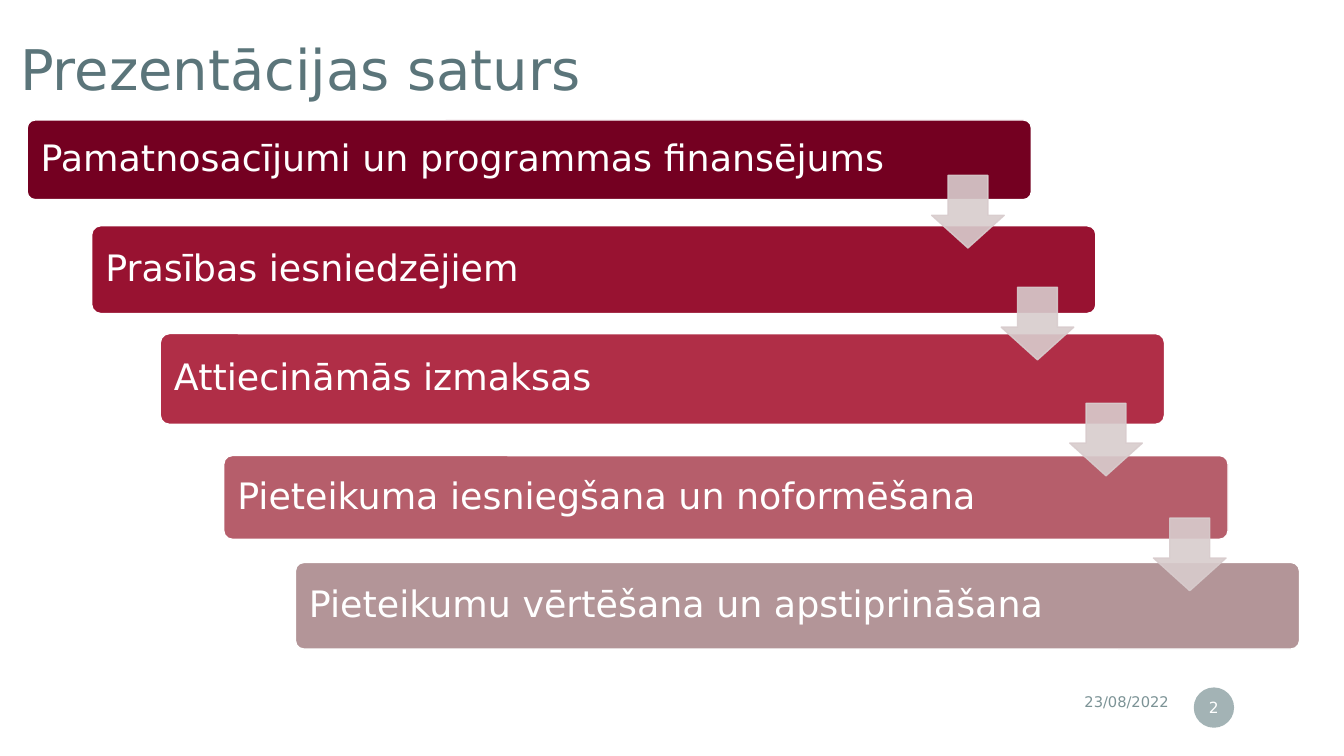
"""Build the contents slide: five cascading topics joined by arrows."""
from dataclasses import dataclass

from lxml.etree import SubElement
from pptx import Presentation
from pptx.dml.color import RGBColor
from pptx.enum.shapes import MSO_SHAPE
from pptx.enum.text import MSO_ANCHOR, PP_ALIGN
from pptx.oxml.ns import qn
from pptx.util import Pt

PX = 9144


@dataclass(frozen=True)
class Theme:
    font: str = "DejaVu Sans"
    title: str = "5B757A"
    footer: str = "7C9396"
    white: str = "FFFFFF"
    arrow: str = "D8CCCD"
    title_size: float = 40
    topic_size: float = 26
    date_size: float = 10.5
    number_size: float = 11


theme = Theme()


def write(shape, text, size, color, align=PP_ALIGN.LEFT, insets=(10, 5), spacing=1.0):
    frame = shape.text_frame
    frame.word_wrap = True
    frame.vertical_anchor = MSO_ANCHOR.MIDDLE
    frame.margin_left = frame.margin_right = insets[0] * PX
    frame.margin_top = frame.margin_bottom = insets[1] * PX
    paragraph = frame.paragraphs[0]
    paragraph.text = text
    paragraph.alignment = align
    paragraph.line_spacing = spacing
    paragraph.font.name = theme.font
    paragraph.font.size = Pt(size)
    paragraph.font.color.rgb = RGBColor.from_string(color)


def add_block(preset, box, color, line=None, opacity=100):
    block = slide.shapes.add_shape(preset, *(n * PX for n in box))
    block.shadow.inherit = False
    block.fill.solid()
    block.fill.fore_color.rgb = RGBColor.from_string(color)
    if line:
        block.line.color.rgb = RGBColor.from_string(line)
        block.line.width = Pt(1)
    else:
        block.line.fill.background()
    if opacity < 100:
        for tint in block.element.spPr.iter(qn("a:srgbClr")):
            SubElement(tint, qn("a:alpha"), val=str(opacity * 1000))
    return block


deck = Presentation()
deck.slide_width, deck.slide_height = 1333 * PX, 750 * PX
slide = deck.slides.add_slide(deck.slide_layouts[6])

title = slide.shapes.add_textbox(0, 12 * PX, 839 * PX, 119 * PX)
write(title, "Prezentācijas saturs", theme.title_size, theme.title, insets=(20, 20), spacing=0.9)

date = slide.shapes.add_textbox(868 * PX, 679 * PX, 301 * PX, 35 * PX)
write(date, "23/08/2022", theme.date_size, theme.footer, PP_ALIGN.RIGHT)

page_number = add_block(MSO_SHAPE.OVAL, (1184, 682, 40, 40), theme.footer, opacity=70)
write(page_number, "2", theme.number_size, theme.white, PP_ALIGN.CENTER, insets=(2, 5))

topics = [
    ("Pamatnosacījumi un programmas finansējums", 27, 119, 79, "740021"),
    ("Prasības iesniedzējiem", 91, 224, 87, "981231"),
    ("Attiecināmās izmaksas", 159, 331, 90, "B02E47"),
    ("Pieteikuma iesniegšana un noformēšana", 222, 452, 83, "B65E6B"),
    ("Pieteikumu vērtēšana un apstiprināšana", 293, 558, 86, "B39598"),
]
for topic, left, top, height, color in topics:
    bar = add_block(MSO_SHAPE.ROUNDED_RECTANGLE, (left, top, 996, height), color, theme.white)
    bar.adjustments[0] = 0.1
    write(bar, topic, theme.topic_size, theme.white, insets=(11, 11), spacing=0.9)

for left, top in [(924, 174), (993, 285), (1061, 400), (1144, 514)]:
    arrow = add_block(MSO_SHAPE.DOWN_ARROW, (left, top, 72, 72), theme.arrow, theme.arrow, 90)
    arrow.adjustments[0] = 0.55
    arrow.adjustments[1] = 0.45

deck.save("out.pptx")
